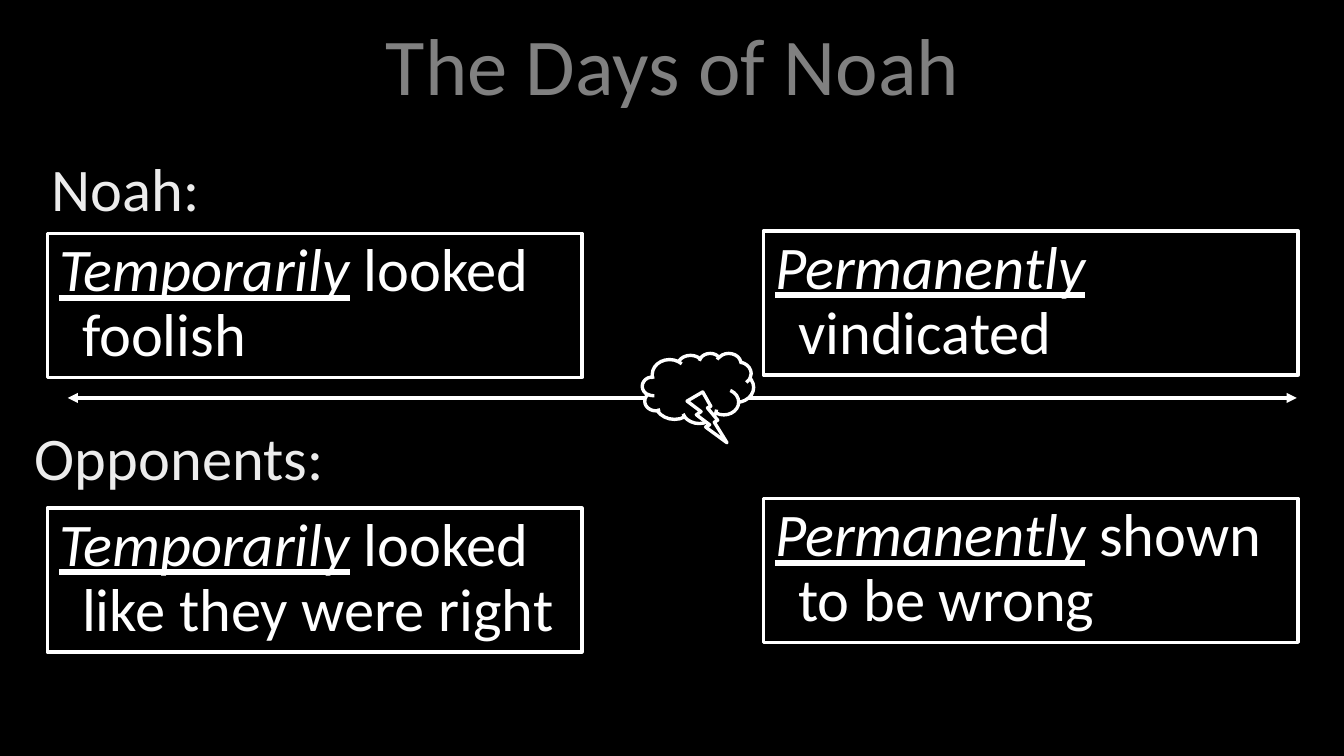
from dataclasses import dataclass

from lxml import etree
from pptx import Presentation
from pptx.dml.color import RGBColor
from pptx.enum.shapes import MSO_CONNECTOR, MSO_SHAPE
from pptx.enum.text import MSO_ANCHOR, MSO_AUTO_SIZE, PP_ALIGN
from pptx.oxml.ns import qn
from pptx.shapes.autoshape import Shape
from pptx.shapes.connector import Connector
from pptx.slide import Slide
from pptx.text.text import Font
from pptx.util import Inches, Pt

ROUNDED = MSO_SHAPE.ROUNDED_RECTANGLE
CLOUD = MSO_SHAPE.CLOUD
LIGHTNING = MSO_SHAPE.LIGHTNING_BOLT
STRAIGHT = MSO_CONNECTOR.STRAIGHT
TOP, MIDDLE = MSO_ANCHOR.TOP, MSO_ANCHOR.MIDDLE
NO_FIT, GROW = MSO_AUTO_SIZE.NONE, MSO_AUTO_SIZE.SHAPE_TO_FIT_TEXT
LEFT, CENTER = PP_ALIGN.LEFT, PP_ALIGN.CENTER

BLACK, WHITE, GRAY, PALE = "000000", "FFFFFF", "808080", "ECECEC"
FONT = "Calibri"
BODY_SIZE = 36
LINE_WIDTH = 2
HANGING = 0.19
NOW_X, LATER_X = 0.39, 6.31
OUTCOME_W, OUTCOME_H = 4.42, 1.19
LABEL_W, LABEL_H = 3.08, 0.71


@dataclass
class Label:
    text: str
    x: float
    y: float


@dataclass
class Outcome:
    duration: str
    result: str
    x: float
    y: float


LABELS = [
    Label("Noah:", 0.33, 1.2),
    Label("Opponents:", 0.19, 3.42),
]
OUTCOMES = [
    Outcome("Temporarily", " looked foolish", NOW_X, 1.93),
    Outcome("Temporarily", " looked like they were right", NOW_X, 4.2),
    Outcome("Permanently", " vindicated", LATER_X, 1.91),
    Outcome("Permanently", " shown to be wrong", LATER_X, 4.12),
]


def color(hex_code: str) -> RGBColor:
    return RGBColor.from_string(hex_code)


def style_font(font: Font, size: float, hex_code: str) -> None:
    font.name = FONT
    font.size = Pt(size)
    font.color.rgb = color(hex_code)


def outline(shape: Shape) -> None:
    shape.shadow.inherit = False
    shape.fill.solid()
    shape.fill.fore_color.rgb = color(BLACK)
    shape.line.color.rgb = color(WHITE)
    shape.line.width = Pt(LINE_WIDTH)


def set_title(slide: Slide, text: str) -> None:
    title = slide.shapes.title
    title.left, title.top = Inches(0.19), Inches(0.14)
    title.width, title.height = Inches(10.74), Inches(0.76)
    frame = title.text_frame
    frame.text = text
    frame.auto_size = NO_FIT
    frame.vertical_anchor = MIDDLE
    frame.paragraphs[0].alignment = CENTER
    style_font(frame.paragraphs[0].runs[0].font, 48, GRAY)


def add_timeline(slide: Slide) -> Connector:
    y = Inches(3.29)
    timeline = slide.shapes.add_connector(STRAIGHT, Inches(0.56), y, Inches(10.72), y)
    timeline.line.color.rgb = color(WHITE)
    timeline.line.width = Pt(LINE_WIDTH)
    stroke = timeline.line._get_or_add_ln()
    for end in ("a:headEnd", "a:tailEnd"):
        etree.SubElement(stroke, qn(end), type="triangle")
    etree.SubElement(timeline._element.spPr, qn("a:effectLst"))
    return timeline


def add_storm(slide: Slide) -> None:
    storm = slide.shapes.add_group_shape()
    for kind, x, y, width, height in (
        (CLOUD, 5.31, 2.92, 0.92, 0.58),
        (LIGHTNING, 5.68, 3.24, 0.33, 0.42),
    ):
        outline(storm.shapes.add_shape(kind, Inches(x), Inches(y), Inches(width), Inches(height)))


def add_label(slide: Slide, label: Label) -> None:
    box = slide.shapes.add_textbox(
        Inches(label.x), Inches(label.y), Inches(LABEL_W), Inches(LABEL_H))
    frame = box.text_frame
    frame.word_wrap = True
    frame.auto_size = GROW
    frame.text = label.text
    style_font(frame.paragraphs[0].runs[0].font, BODY_SIZE, PALE)


def add_outcome(slide: Slide, outcome: Outcome) -> None:
    box = slide.shapes.add_shape(
        ROUNDED, Inches(outcome.x), Inches(outcome.y), Inches(OUTCOME_W), Inches(OUTCOME_H))
    box.adjustments[0] = 0
    outline(box)
    frame = box.text_frame
    frame.word_wrap = True
    frame.auto_size = GROW
    frame.vertical_anchor = TOP
    statement = frame.paragraphs[0]
    statement.alignment = LEFT
    statement.line_spacing = 0.9
    properties = statement._p.get_or_add_pPr()
    properties.set("marL", str(Inches(HANGING)))
    properties.set("indent", str(-Inches(HANGING)))
    for text, stressed in ((outcome.duration, True), (outcome.result, False)):
        run = statement.add_run()
        run.text = text
        style_font(run.font, BODY_SIZE, WHITE)
        run.font.italic = stressed
        run.font.underline = stressed


def main() -> None:
    deck = Presentation()
    deck.slide_width, deck.slide_height = Inches(11.11), Inches(6.25)
    slide = deck.slides.add_slide(deck.slide_layouts[5])
    slide.background.fill.solid()
    slide.background.fill.fore_color.rgb = color(BLACK)

    # Title
    set_title(slide, "The Days of Noah")

    # Timeline with the storm in the middle
    add_timeline(slide)
    add_storm(slide)

    # Each side and its outcomes before and after the storm
    for label in LABELS:
        add_label(slide, label)
    for outcome in OUTCOMES:
        add_outcome(slide, outcome)

    deck.save("out.pptx")


if __name__ == "__main__":
    main()
